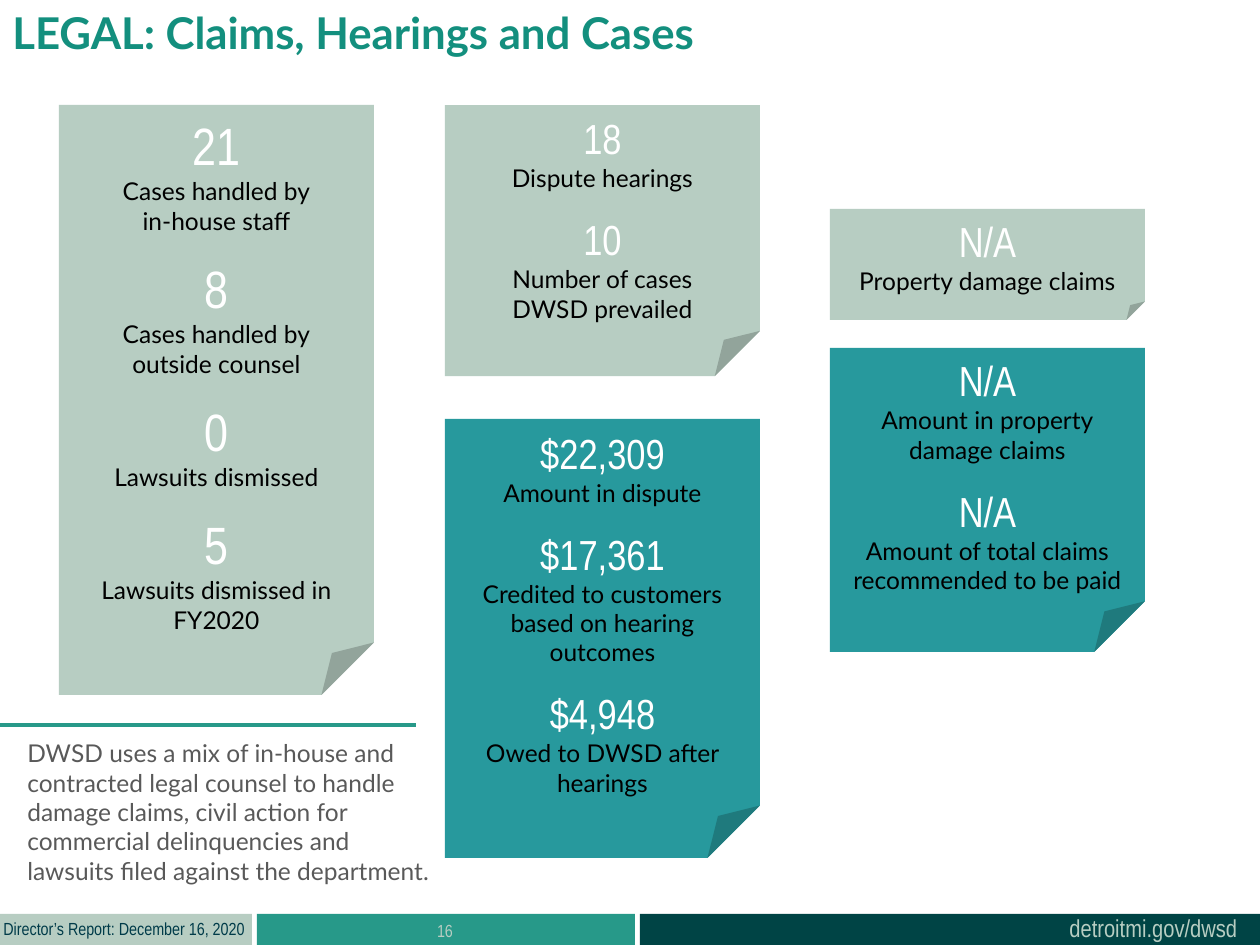
"""Build the legal claims, hearings and cases slide."""
from lxml.etree import SubElement
from pptx import Presentation
from pptx.dml.color import RGBColor
from pptx.enum.shapes import MSO_CONNECTOR, MSO_SHAPE
from pptx.enum.text import MSO_ANCHOR, PP_ALIGN
from pptx.oxml.ns import qn
from pptx.util import Pt

SCALE = 914400 / 126
SLIDE_W, SLIDE_H = 1260, 945
COLORS = {
    "sage": "B7CDC2", "teal": "27999D", "green": "279989", "dark": "004445",
    "title": "138F7E", "navy": "003B49", "gray": "595959",
    "white": "FFFFFF", "black": "000000",
}
NARROW, LATO = "Arial Narrow", "Lato"
CARD_W = 315
COLUMNS = [59, 445, 830]

FOOTER_Y, FOOTER_H = 914, 31
FOOTER_BARS = [(0, 252, "sage"), (257, 378, "green"), (640, 620, "dark")]

TEXTS = [
    ("LEGAL: Claims, Hearings and Cases", (0, 0, 956, 97),
     LATO, 25, "title", True, PP_ALIGN.LEFT, True),
    ("DWSD uses a mix of in-house and contracted legal counsel to handle "
     "damage claims, civil action for commercial delinquencies and lawsuits "
     "filed against the department.", (15, 732, 430, 161),
     LATO, 14, "gray", False, PP_ALIGN.LEFT, True),
    ("Director’s Report: December 16, 2020", (-9, 912, 268, 34),
     NARROW, 10, "navy", False, PP_ALIGN.LEFT, False),
    ("16", (256, 914, 378, 31),
     NARROW, 10, "sage", False, PP_ALIGN.CENTER, True),
    ("detroitmi.gov/dwsd", (1057, 907, 195, 43),
     NARROW, 14, "sage", False, PP_ALIGN.LEFT, False),
]

CARDS = [
    (0, 105, 590, "sage", 30, [
        ("21", "Cases handled by\vin-house staff"),
        ("8", "Cases handled by\voutside counsel"),
        ("0", "Lawsuits dismissed"),
        ("5", "Lawsuits dismissed in FY2020")]),
    (1, 105, 271, "sage", 24, [
        ("18", "Dispute hearings"),
        ("10", "Number of cases\vDWSD prevailed")]),
    (1, 419, 439, "teal", 24, [
        ("$22,309", "Amount in dispute"),
        ("$17,361", "Credited to customers based on hearing outcomes"),
        ("$4,948", "Owed to DWSD after hearings")]),
    (2, 209, 111, "sage", 24, [("N/A", "Property damage claims")]),
    (2, 348, 304, "teal", 24, [
        ("N/A", "Amount in property\vdamage claims"),
        ("N/A", "Amount of total claims recommended to be paid")]),
]


def px(*values):
    return [round(v * SCALE) for v in values]


def rgb(name):
    return RGBColor.from_string(COLORS[name])


def write(p, text, font, size, color, bold=False, align=PP_ALIGN.CENTER):
    p.text = text
    p.alignment = align
    p.font.name, p.font.size, p.font.bold = font, Pt(size), bold
    p.font.color.rgb = rgb(color)


def add_shape(s, kind, box, color):
    sp = s.shapes.add_shape(kind, *px(*box))
    sp.shadow.inherit = False
    sp.fill.solid()
    sp.fill.fore_color.rgb = rgb(color)
    sp.line.fill.background()
    return sp


def add_text(s, text, box, font, size, color, bold, align, wrap):
    tf = s.shapes.add_textbox(*px(*box)).text_frame
    tf.word_wrap = wrap
    write(tf.paragraphs[0], text, font, size, color, bold, align)


def add_card(s, column, top, height, color, size, entries):
    box = (COLUMNS[column], top, CARD_W, height)
    tf = add_shape(s, MSO_SHAPE.FOLDED_CORNER, box, color).text_frame
    tf.word_wrap = True
    tf.vertical_anchor = MSO_ANCHOR.MIDDLE
    for i, (figure, label) in enumerate(entries):
        p = tf.add_paragraph() if i else tf.paragraphs[0]
        write(p, figure, NARROW, size, "white")
        if i:
            p.space_before = Pt(12)
        write(tf.add_paragraph(), label, LATO, 14, "black")


def add_rule(s, x1, x2, y):
    line = s.shapes.add_connector(MSO_CONNECTOR.STRAIGHT, *px(x1, y, x2, y))
    line.line.color.rgb = rgb("green")
    line.line.width = Pt(2.25)
    SubElement(line._element.spPr, qn("a:effectLst"))


def main():
    prs = Presentation()
    prs.slide_width, prs.slide_height = px(SLIDE_W, SLIDE_H)
    s = prs.slides.add_slide(prs.slide_layouts[6])
    for left, width, color in FOOTER_BARS:
        add_shape(s, MSO_SHAPE.RECTANGLE, (left, FOOTER_Y, width, FOOTER_H), color)
    for card in CARDS:
        add_card(s, *card)
    for item in TEXTS:
        add_text(s, *item)
    add_rule(s, 0, 416, 725)
    prs.save("out.pptx")


if __name__ == "__main__":
    main()
